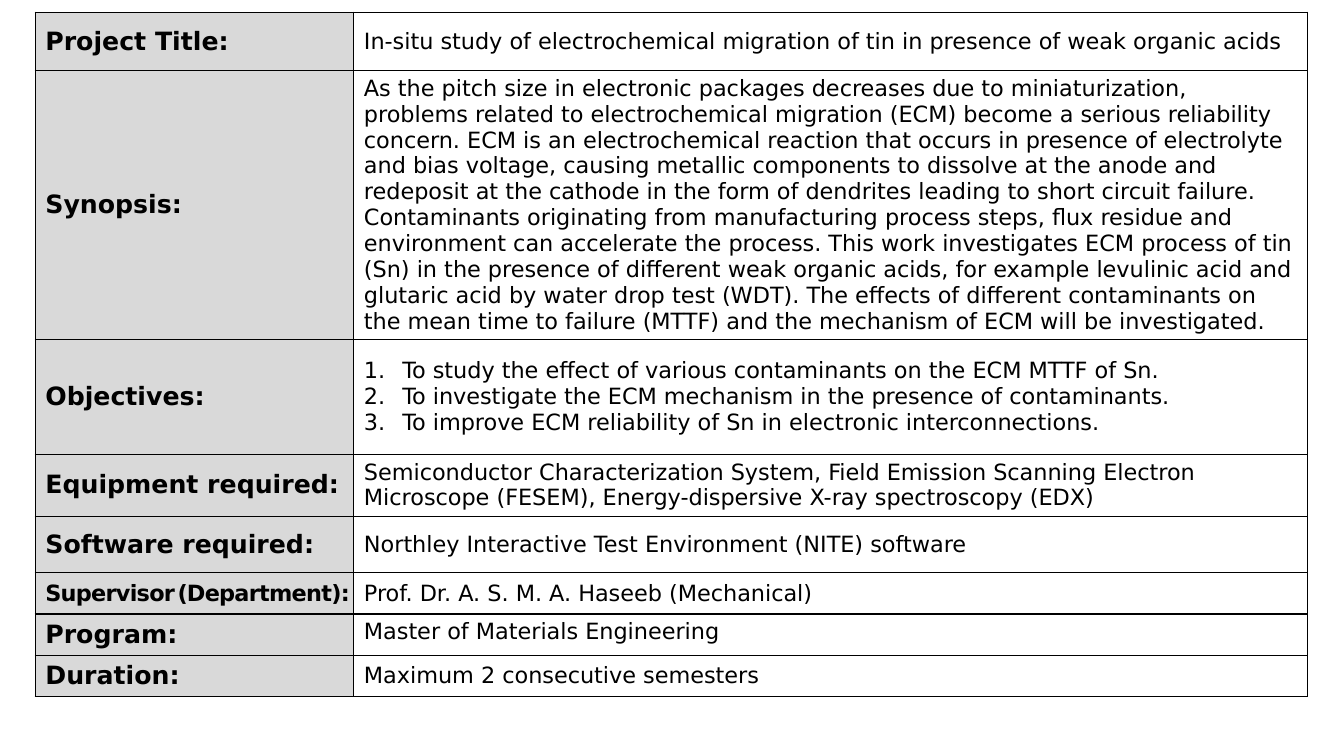
"""Build a one-slide project proposal summary table."""
from lxml import etree
from pptx import Presentation
from pptx.dml.color import RGBColor
from pptx.enum.text import MSO_ANCHOR
from pptx.oxml.ns import qn
from pptx.util import Inches, Pt

MIDDLE = MSO_ANCHOR.MIDDLE
TOP = MSO_ANCHOR.TOP
COLORS = {"label": "D9D9D9", "detail": "FFFFFF", "ink": "000000"}
LABEL_SIZE, DETAIL_SIZE = 18, 16

SYNOPSIS = (
    "As the pitch size in electronic packages decreases due to miniaturization, "
    "problems related to electrochemical migration (ECM) become a serious reliability "
    "concern. ECM is an electrochemical reaction that occurs in presence of electrolyte "
    "and bias voltage, causing metallic components to dissolve at the anode and "
    "redeposit at the cathode in the form of dendrites leading to short circuit failure. "
    "Contaminants originating from manufacturing process steps, flux residue and "
    "environment can accelerate the process. This work investigates ECM process of tin "
    "(Sn) in the presence of different weak organic acids, for example levulinic acid and "
    "glutaric acid by water drop test (WDT). The effects of different contaminants on "
    "the mean time to failure (MTTF) and the mechanism of ECM will be investigated."
)
OBJECTIVES = [
    "To study the effect of various contaminants on the ECM MTTF of Sn.",
    "To investigate the ECM mechanism in the presence of contaminants.",
    "To improve ECM reliability of Sn in electronic interconnections.",
]
EQUIPMENT = (
    "Semiconductor Characterization System, Field Emission Scanning Electron "
    "Microscope (FESEM), Energy-dispersive X-ray spectroscopy (EDX)"
)
SUPERVISOR_LABEL = [("Supervisor", 16), (" ", 5), ("(Department):", 16)]
COLUMN_WIDTHS = [3.16, 9.46]
PROPOSAL = [
    (0.58, "Project Title:", "In-situ study of electrochemical migration of tin "
     "in presence of weak organic acids"),
    (2.66, "Synopsis:", SYNOPSIS),
    (1.14, "Objectives:", OBJECTIVES),
    (0.52, "Equipment required:", EQUIPMENT),
    (0.56, "Software required:", "Northley Interactive Test Environment (NITE) software"),
    (0.41, SUPERVISOR_LABEL, "Prof. Dr. A. S. M. A. Haseeb (Mechanical)"),
    (0.41, "Program:", "Master of Materials Engineering"),
    (0.41, "Duration:", "Maximum 2 consecutive semesters"),
]


class ProposalSlide:
    """Hold the style and the slide, and draw its elements."""

    def __init__(self, slide, font_name):
        self.slide = slide
        self.font_name = font_name

    def style(self, font, size, bold):
        """Apply the slide's typeface to a font."""
        font.name = self.font_name
        font.size = Pt(size)
        font.bold = bold
        font.color.rgb = RGBColor.from_string(COLORS["ink"])

    def table(self, left, top, widths, heights):
        """Add a plain table and return it."""
        grid = self.slide.shapes.add_table(
            len(heights), len(widths), Inches(left), Inches(top),
            Inches(sum(widths)), Inches(sum(heights))).table
        grid.first_row = grid.horz_banding = False
        for column, width in zip(grid.columns, widths):
            column.width = Inches(width)
        for row, height in zip(grid.rows, heights):
            row.height = Inches(height)
        return grid

    def cell(self, cell, fill, anchor=MIDDLE):
        """Fill, anchor and outline a cell."""
        cell.fill.solid()
        cell.fill.fore_color.rgb = RGBColor.from_string(COLORS[fill])
        cell.vertical_anchor = anchor
        properties = cell._tc.get_or_add_tcPr()
        for position, side in enumerate(("lnL", "lnR", "lnT", "lnB")):
            border = etree.Element(qn(f"a:{side}"), w=str(Pt(1)))
            solid = etree.SubElement(border, qn("a:solidFill"))
            etree.SubElement(solid, qn("a:srgbClr"), val=COLORS["ink"])
            properties.insert(position, border)

    def text(self, cell, wording, size, bold):
        """Write one paragraph in a cell."""
        cell.text = wording
        self.style(cell.text_frame.paragraphs[0].font, size, bold)

    def numbered(self, cell, items, size):
        """Write a numbered list in a cell."""
        cell.text = "\n".join(items)
        for paragraph in cell.text_frame.paragraphs:
            self.style(paragraph.font, size, False)
            properties = paragraph._p.get_or_add_pPr()
            properties.set("marL", str(Inches(0.38)))
            properties.set("indent", str(Inches(-0.38)))
            properties.insert(0, etree.Element(qn("a:buAutoNum"), type="arabicPeriod"))

    def condensed(self, cell, pieces):
        """Write a tightly spaced bold label in mixed sizes."""
        cell.margin_right = 0
        paragraph = cell.text_frame.paragraphs[0]
        for wording, size in pieces:
            run = paragraph.add_run()
            run.text = wording
            self.style(run.font, size, True)
            run._r.get_or_add_rPr().set("spc", "-50")


def main():
    presentation = Presentation()
    presentation.slide_width, presentation.slide_height = Inches(13.33), Inches(7.5)
    page = ProposalSlide(
        presentation.slides.add_slide(presentation.slide_layouts[6]), "DejaVu Sans")
    heights = [height for height, _, _ in PROPOSAL]
    summary = page.table(0.35, 0.12, COLUMN_WIDTHS, heights)
    for row, (_, label, detail) in enumerate(PROPOSAL):
        label_cell, detail_cell = summary.cell(row, 0), summary.cell(row, 1)
        page.cell(label_cell, "label")
        page.cell(detail_cell, "detail", TOP if label == "Program:" else MIDDLE)
        if label is SUPERVISOR_LABEL:
            page.condensed(label_cell, label)
        else:
            page.text(label_cell, label, LABEL_SIZE, True)
        if detail is OBJECTIVES:
            page.numbered(detail_cell, detail, DETAIL_SIZE)
        else:
            page.text(detail_cell, detail, DETAIL_SIZE, False)
    presentation.save("out.pptx")


if __name__ == "__main__":
    main()
